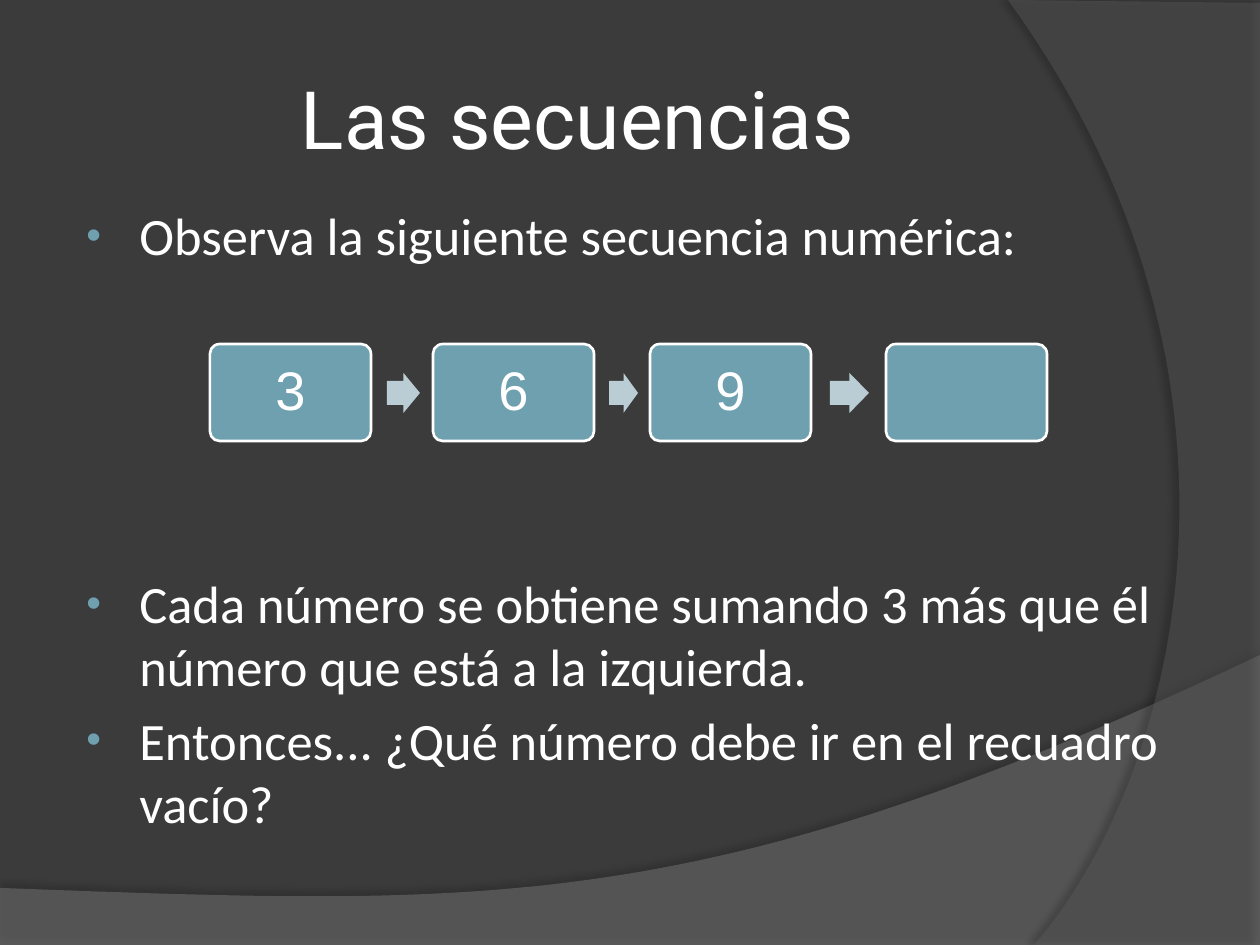
from lxml.etree import SubElement
from pptx import Presentation
from pptx.dml.color import RGBColor
from pptx.enum.shapes import MSO_SHAPE as Preset
from pptx.enum.text import MSO_ANCHOR as Anchor, PP_ALIGN as Align
from pptx.oxml.ns import qn
from pptx.util import Emu, Pt

SCALE = 914400 / 126
TENTHS = 10
CURVE_STEPS = 60
COLORS = {
    "background": "3B3B3B",
    "text": "FFFFFF",
    "accent": "6EA0B0",
    "arrow": "BACDD4",
    "wave": "7F7F7F",
    "arc": "5E5E5E",
    "shadow": "000000",
}


def px(value):
    return Emu(round(value * SCALE))


def color(name):
    return RGBColor.from_string(COLORS[name])


def add_element(parent, tag, **attributes):
    return SubElement(parent, qn(tag), {key: str(value) for key, value in attributes.items()})


def set_fill(shape, name):
    shape.fill.solid()
    shape.fill.fore_color.rgb = color(name)


def bezier(start, control_1, control_2, end):
    """Points along a cubic curve, without its start."""
    points = []
    for step in range(1, CURVE_STEPS + 1):
        t = step / CURVE_STEPS
        weights = ((1 - t) ** 3, 3 * t * (1 - t) ** 2, 3 * t * t * (1 - t), t ** 3)
        corners = zip(start, control_1, control_2, end)
        points.append(tuple(sum(w * c for w, c in zip(weights, axis)) for axis in corners))
    return points


def add_swoosh(slide, points, fill, opacity, shadow_opacity, distance, direction):
    """Translucent outline with a soft shadow; opacities in percent."""
    scaled = [(round(x * TENTHS), round(y * TENTHS)) for x, y in points]
    builder = slide.shapes.build_freeform(*scaled[0], scale=SCALE / TENTHS)
    builder.add_line_segments(scaled[1:], close=True)
    shape = builder.convert_to_shape()
    set_fill(shape, fill)
    fill_color = shape.fill._xPr.find(qn("a:solidFill"))[0]
    add_element(fill_color, "a:alpha", val=opacity * 1000)
    shape.line.fill.background()
    shape.shadow.inherit = False
    effects = shape.element.spPr.find(qn("a:effectLst"))
    shadow = add_element(effects, "a:outerShdw", blurRad=Pt(4), dist=Pt(distance),
                         dir=direction * 60000, algn="ctr", rotWithShape=0)
    shadow_color = add_element(shadow, "a:srgbClr", val=COLORS["shadow"])
    add_element(shadow_color, "a:alpha", val=shadow_opacity * 1000)


def add_run(paragraph, text, size, font):
    run = paragraph.add_run()
    run.text = text
    run.font.size = Pt(size)
    run.font.name = font
    run.font.color.rgb = color("text")


def add_text_box(slide, left, top, width, height):
    frame = slide.shapes.add_textbox(px(left), px(top), px(width), px(height)).text_frame
    frame.word_wrap = True
    return frame


def add_title(slide, text):
    frame = add_text_box(slide, 63, 38, 1029, 158)
    frame.margin_left = frame.margin_right = px(6)
    frame.margin_top = frame.margin_bottom = px(6)
    frame.vertical_anchor = Anchor.MIDDLE
    paragraph = frame.paragraphs[0]
    paragraph.alignment = Align.CENTER
    add_run(paragraph, text, 46, "Roboto")


def add_bullets(slide, top, height, texts):
    frame = add_text_box(slide, 69, top, 1131, height)
    for index, text in enumerate(texts):
        paragraph = frame.add_paragraph() if index else frame.paragraphs[0]
        properties = paragraph._p.get_or_add_pPr()
        properties.set("marL", str(px(58)))
        properties.set("indent", str(px(-53)))
        bullet_color = add_element(properties, "a:buClr")
        add_element(bullet_color, "a:srgbClr", val=COLORS["accent"])
        add_element(properties, "a:buSzPct", val=80000)
        add_element(properties, "a:buFont", typeface="Arial")
        add_element(properties, "a:buChar", char="•")
        if index:
            paragraph.space_before = Pt(6)
        add_run(paragraph, text, 30, "Calibri")


def add_preset(slide, preset, fill, left, top, width, height):
    shape = slide.shapes.add_shape(preset, px(left), px(top), px(width), px(height))
    shape.shadow.inherit = False
    set_fill(shape, fill)
    return shape


def add_number_box(slide, left, number):
    box = add_preset(slide, Preset.ROUNDED_RECTANGLE, "accent", left, 344, 161, 97)
    box.adjustments[0] = 0.1
    box.line.color.rgb = color("text")
    box.line.width = Pt(1.5)
    if number:
        frame = box.text_frame
        frame.vertical_anchor = Anchor.MIDDLE
        paragraph = frame.paragraphs[0]
        paragraph.alignment = Align.CENTER
        paragraph.line_spacing = 0.9
        add_run(paragraph, number, 31, "Arial")


def add_arrow(slide, left, width):
    arrow = add_preset(slide, Preset.RIGHT_ARROW, "arrow", left, 373, width, 40)
    arrow.adjustments[0] = 0.6
    arrow.adjustments[1] = 0.5
    arrow.line.fill.background()


def main():
    presentation = Presentation()
    presentation.slide_width, presentation.slide_height = px(1260), px(945)
    slide = presentation.slides.add_slide(presentation.slide_layouts[6])
    set_fill(slide.background, "background")

    wave = [(0, 888), (0, 946), (1260, 946), (1260, 655)]
    wave += bezier(wave[-1], (704, 919), (493, 906), (0, 888))
    add_swoosh(slide, wave, "wave", 45, 35, 3.5, 270)
    arc = [(1260, 3), (1260, 945), (1034, 945)]
    arc += bezier(arc[-1], (1178, 780), (1283, 378), (1008, 0))
    add_swoosh(slide, arc, "arc", 40, 45, 4, 180)

    add_title(slide, "Las secuencias")
    add_bullets(slide, 197, 76, ["Observa la siguiente secuencia numérica:"])
    add_bullets(slide, 565, 256, [
        "Cada número se obtiene sumando 3 más que él número que está a la izquierda.",
        "Entonces... ¿Qué número debe ir en el recuadro vacío?",
    ])

    for left, number in ((210, "3"), (433, "6"), (650, "9"), (886, "")):
        add_number_box(slide, left, number)
    for left, width in ((387, 33), (609, 29), (830, 39)):
        add_arrow(slide, left, width)

    presentation.save("out.pptx")


if __name__ == "__main__":
    main()
